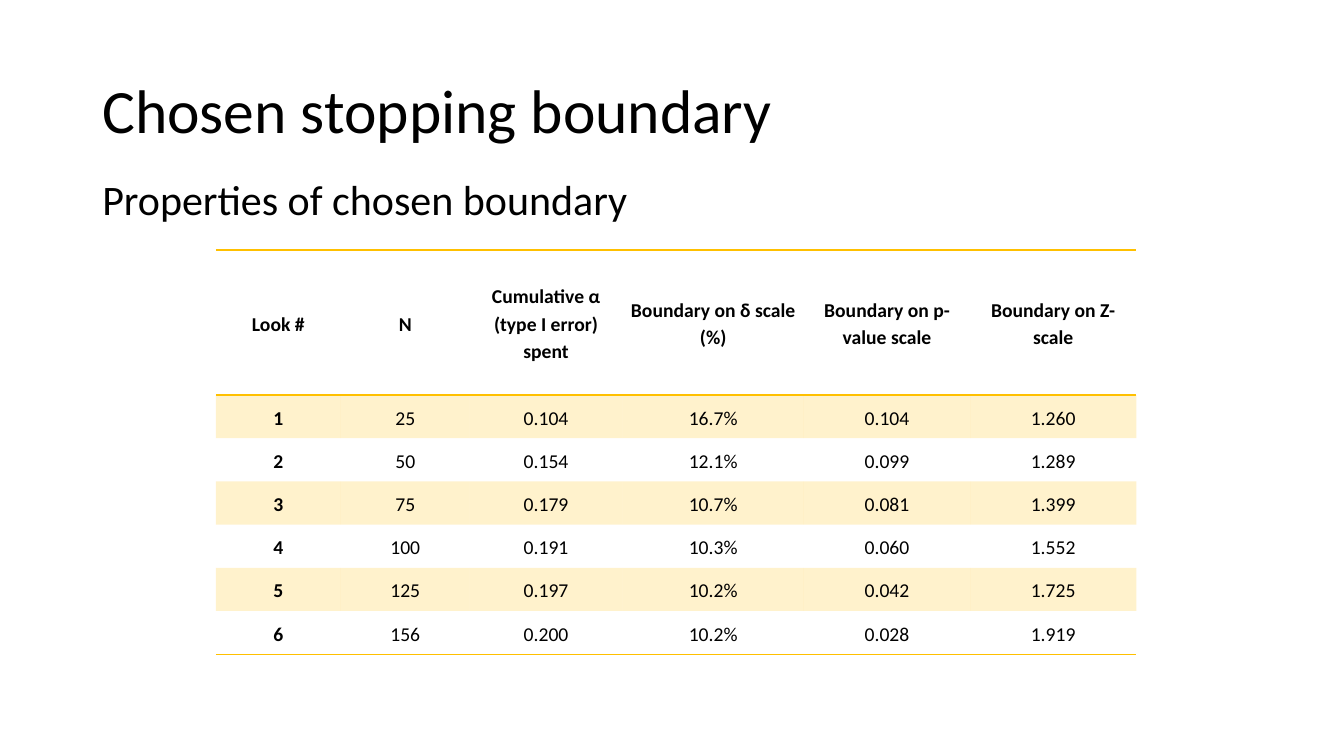
from dataclasses import dataclass

from lxml import etree
from pptx import Presentation
from pptx.dml.color import RGBColor
from pptx.enum.text import MSO_ANCHOR, MSO_AUTO_SIZE, PP_ALIGN
from pptx.oxml.ns import qn
from pptx.util import Pt

TOP, MIDDLE = MSO_ANCHOR.TOP, MSO_ANCHOR.MIDDLE
LEFT, CENTER = PP_ALIGN.LEFT, PP_ALIGN.CENTER
GROW, FIXED = MSO_AUTO_SIZE.SHAPE_TO_FIT_TEXT, MSO_AUTO_SIZE.NONE
NO_STYLE_NO_GRID = "{2D5ABB26-0587-4C30-8999-92F81FD0307C}"

HEADINGS = ["Look #", "N", "Cumulative α (type I error) spent",
            "Boundary on δ scale (%)", "Boundary on p-value scale",
            "Boundary on Z-scale"]
LOOKS = [
    ["1", "25", "0.104", "16.7%", "0.104", "1.260"],
    ["2", "50", "0.154", "12.1%", "0.099", "1.289"],
    ["3", "75", "0.179", "10.7%", "0.081", "1.399"],
    ["4", "100", "0.191", "10.3%", "0.060", "1.552"],
    ["5", "125", "0.197", "10.2%", "0.042", "1.725"],
    ["6", "156", "0.200", "10.2%", "0.028", "1.919"],
]
COLUMN_WIDTHS = [89.3, 92, 109.2, 129.6, 118.7, 118.7]
HEADER_HEIGHT, LOOK_HEIGHT = 103.6, 30.86


@dataclass(frozen=True)
class Theme:
    font: str = "Calibri"
    ink: str = "000000"
    accent: str = "FFC000"
    band_alpha: int = 20
    title_size: int = 44
    subtitle_size: int = 30
    table_size: int = 14
    rule_width: int = 1


def apply(target, formats):
    for name, value in formats.items():
        setattr(target, name, value)


class SlideBuilder:
    def __init__(self, page, theme):
        self.page = page
        self.theme = theme

    def fill_frame(self, frame, text, size, bold=False, align=LEFT, spacing=1.0):
        para = frame.paragraphs[0]
        apply(para, {"alignment": align, "line_spacing": spacing})
        span = para.add_run()
        span.text = text
        apply(span.font, {"name": self.theme.font, "size": Pt(size), "bold": bold})
        span.font.color.rgb = RGBColor.from_string(self.theme.ink)

    def text(self, bounds, text, size, anchor=TOP, auto_size=FIXED, spacing=1.0):
        box = self.page.shapes.add_textbox(*map(Pt, bounds))
        apply(box.text_frame, {"word_wrap": True, "auto_size": auto_size,
                               "vertical_anchor": anchor})
        self.fill_frame(box.text_frame, text, size, spacing=spacing)

    def rule(self, cell, side):
        """Draw a cell border; side is lnT or lnB, with lnT drawn first."""
        line = etree.SubElement(cell._tc.get_or_add_tcPr(), qn(f"a:{side}"),
                                w=str(Pt(self.theme.rule_width)))
        fill = etree.SubElement(line, qn("a:solidFill"))
        etree.SubElement(fill, qn("a:srgbClr"), val=self.theme.accent)

    def band(self, cell):
        cell.fill.solid()
        cell.fill.fore_color.rgb = RGBColor.from_string(self.theme.accent)
        color = cell._tc.tcPr.find(f"{qn('a:solidFill')}/{qn('a:srgbClr')}")
        etree.SubElement(color, qn("a:alpha"), val=str(self.theme.band_alpha * 1000))

    def table(self, left, top, widths, heights, rows):
        bounds = map(Pt, (left, top, sum(widths), sum(heights)))
        frame = self.page.shapes.add_table(len(rows), len(widths), *bounds)
        table = frame.table
        apply(table, {"first_row": False, "horz_banding": False})
        table._tbl.tblPr.find(qn("a:tableStyleId")).text = NO_STYLE_NO_GRID
        for column, width in zip(table.columns, widths):
            column.width = Pt(width)
        for row, height in zip(table.rows, heights):
            row.height = Pt(height)
        last = len(rows) - 1
        for r, values in enumerate(rows):
            for c, value in enumerate(values):
                cell = table.cell(r, c)
                apply(cell, {"vertical_anchor": MIDDLE,
                             "margin_left": Pt(5.4), "margin_right": Pt(5.4),
                             "margin_top": 0, "margin_bottom": 0})
                self.fill_frame(cell.text_frame, value, self.theme.table_size,
                                bold=r == 0 or c == 0, align=CENTER, spacing=1.15)
                if r == 0:
                    self.rule(cell, "lnT")
                if r in (0, last):
                    self.rule(cell, "lnB")
                if r % 2:
                    self.band(cell)
                else:
                    cell.fill.background()


def main():
    deck = Presentation()
    apply(deck, {"slide_width": Pt(960), "slide_height": Pt(540)})
    theme = Theme()
    slide = SlideBuilder(deck.slides.add_slide(deck.slide_layouts[6]), theme)
    slide.text((66, 28.8, 828, 104.4), "Chosen stopping boundary",
               theme.title_size, anchor=MIDDLE, spacing=0.9)
    slide.text((66, 120.2, 456.5, 43.9), "Properties of chosen boundary",
               theme.subtitle_size, auto_size=GROW)
    slide.table(154.2, 178.6, COLUMN_WIDTHS,
                [HEADER_HEIGHT] + [LOOK_HEIGHT] * len(LOOKS), [HEADINGS] + LOOKS)
    deck.save("out.pptx")


if __name__ == "__main__":
    main()
